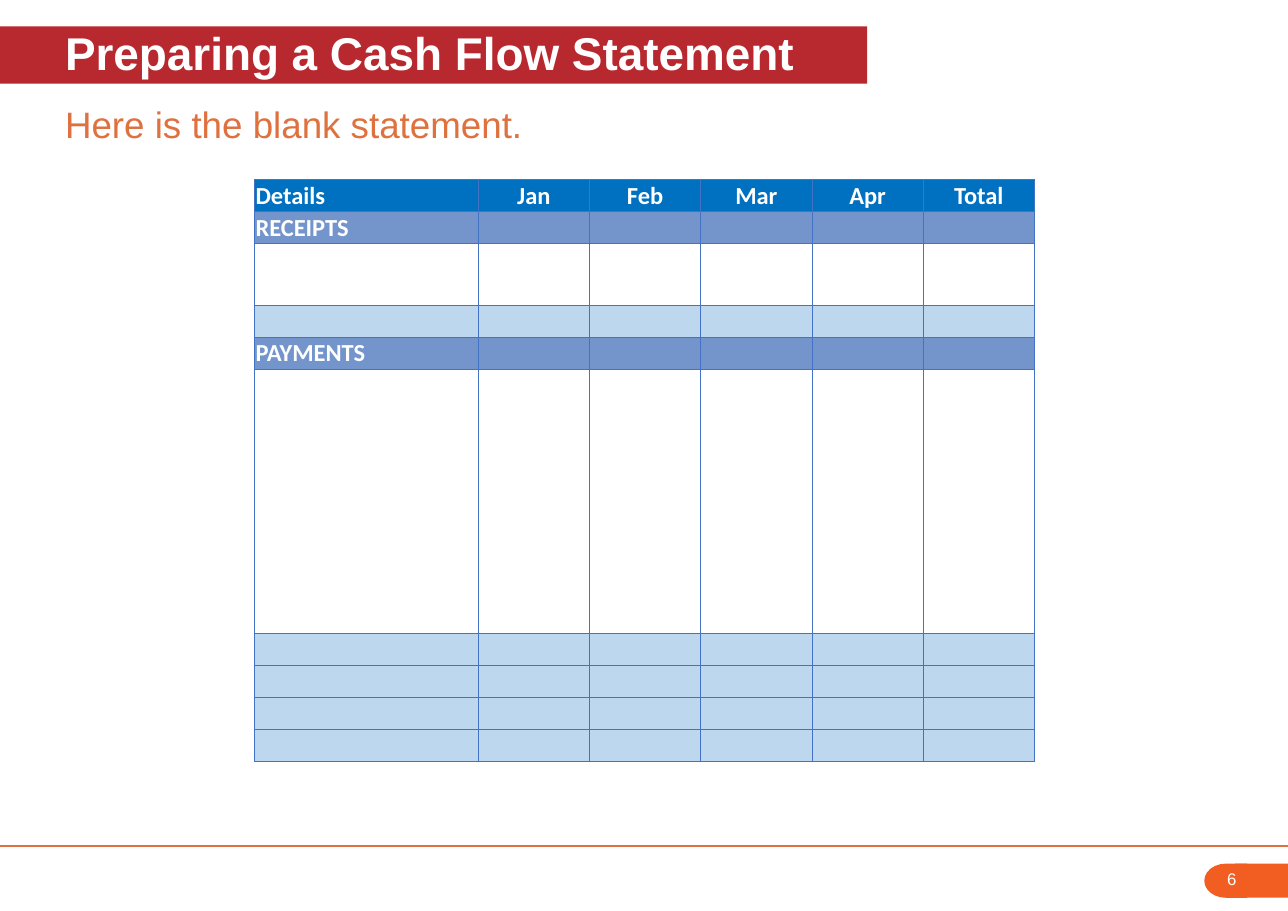
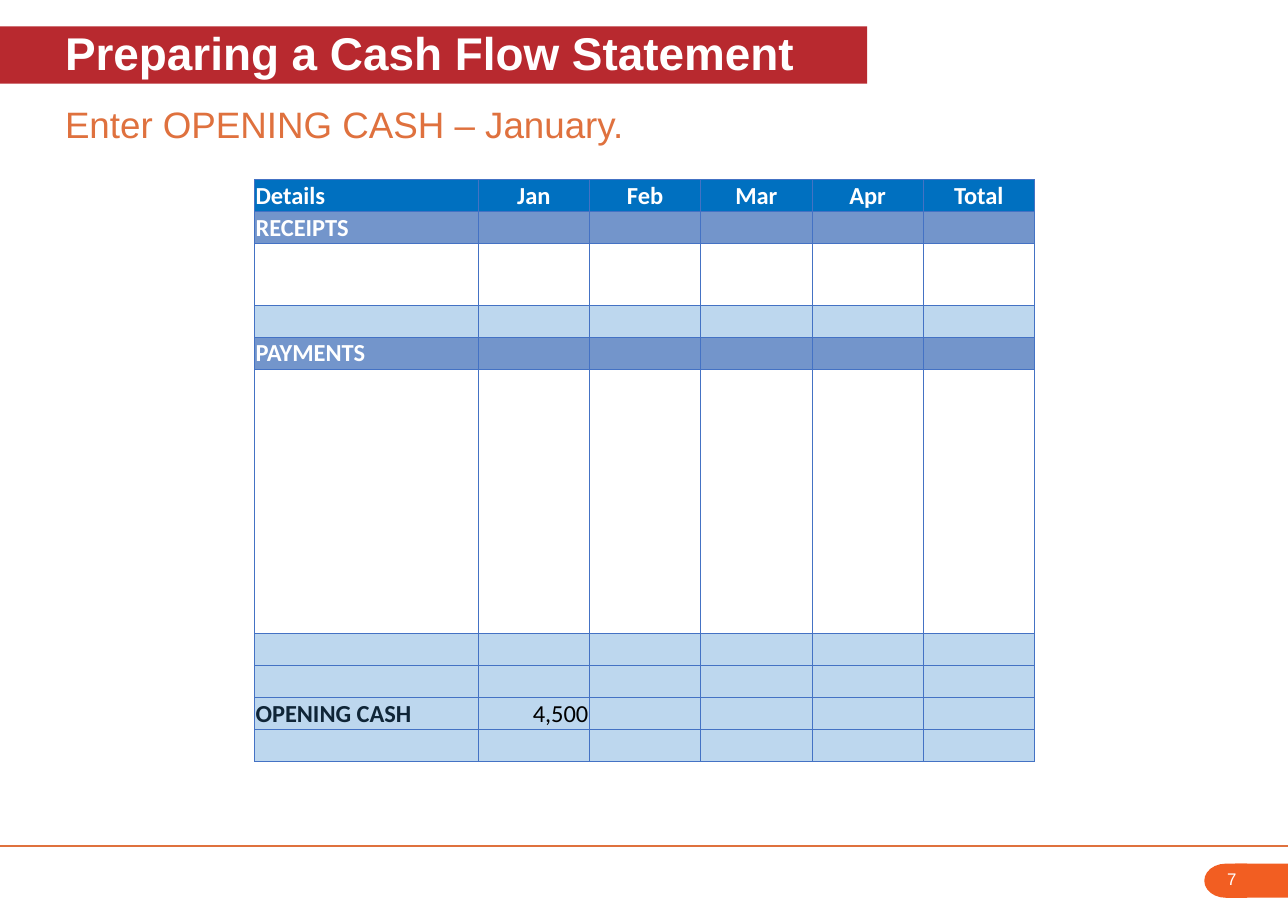
import pptx
import pptx.dml.color
import pptx.enum.shapes
import pptx.enum.text
import pptx.oxml
import pptx.oxml.ns
import pptx.util

Inches = pptx.util.Inches
Pt = pptx.util.Pt
RGB = pptx.dml.color.RGBColor.from_string
MIDDLE = pptx.enum.text.MSO_ANCHOR.MIDDLE
ALIGN = pptx.enum.text.PP_ALIGN
SHAPE = pptx.enum.shapes.MSO_SHAPE

COLORS = {
    "white": "FFFFFF", "black": "000000", "navy": "0F2537",
    "title": "B8292F", "accent": "DF713E", "badge": "F25E22",
    "header": "0070C0", "section": "7395CB", "total": "BDD7EE", "grid": "4472C4",
}
SLIDE_WIDTH = 11.69
TITLE = "Preparing a Cash Flow Statement"
SLIDES = [
    (6, "Here is the blank statement.", {}),
    (7, "Enter OPENING CASH – January.", {(16, 0): "OPENING CASH", (16, 1): "4,500"}),
]

HEADINGS = ["Details", "Jan", "Feb", "Mar", "Apr", "Total"]
LABELS = {(0, col): heading for col, heading in enumerate(HEADINGS)}
LABELS |= {(1, 0): "RECEIPTS", (5, 0): "PAYMENTS"}
COLUMN_WIDTHS = [2.03] + [1.01] * 5
# Each band: fill colour, number of rows, row height
BANDS = [
    ("header", 1, 0.29), ("section", 1, 0.29), ("white", 2, 0.28), ("total", 1, 0.29),
    ("section", 1, 0.29), ("white", 8, 0.3), ("total", 4, 0.29),
]
# Each row: fill colour, height, line above, line below; entry rows form one open block
ROWS = [
    (fill, height, fill != "white" or i == 0, fill != "white" or i == count - 1)
    for fill, count, height in BANDS for i in range(count)
]


def write(frame, text, font, size, color, bold=False, align=ALIGN.LEFT):
    """Put one paragraph of evenly formatted text in a frame."""
    frame.text = text
    para = frame.paragraphs[0]
    para.alignment = align
    para.font.name = font
    para.font.size = Pt(size)
    para.font.bold = bold
    para.font.color.rgb = RGB(COLORS[color])


def set_borders(cell, top, bottom):
    """Rule both sides of a cell, and its top and bottom where asked."""
    properties = cell._tc.get_or_add_tcPr()
    for side, shown in (("L", True), ("R", True), ("T", top), ("B", bottom)):
        paint = f'<a:solidFill><a:srgbClr val="{COLORS["grid"]}"/></a:solidFill>'
        properties.append(pptx.oxml.parse_xml(
            f'<a:ln{side} {pptx.oxml.ns.nsdecls("a")} w="{Pt(0.5)}">'
            f'{paint if shown else "<a:noFill/>"}</a:ln{side}>'))


deck = pptx.Presentation()
deck.slide_width = Inches(SLIDE_WIDTH)
deck.slide_height = Inches(8.27)

for number, subtitle, entries in SLIDES:
    page = deck.slides.add_slide(deck.slide_layouts[5])

    # Footer
    rule = page.shapes.add_connector(
        pptx.enum.shapes.MSO_CONNECTOR.STRAIGHT,
        0, Inches(7.68), Inches(SLIDE_WIDTH), Inches(7.68))
    rule.line.color.rgb = RGB(COLORS["accent"])
    rule.line.width = Pt(0.75)
    rule._element.spPr.append(
        pptx.oxml.parse_xml(f'<a:effectLst {pptx.oxml.ns.nsdecls("a")}/>'))
    for kind, left, width, turn in (
        (SHAPE.FLOWCHART_DELAY, 10.93, 0.39, 180),
        (SHAPE.RECTANGLE, 11.21, 0.48, 0),
    ):
        badge = page.shapes.add_shape(
            kind, Inches(left), Inches(7.84), Inches(width), Inches(0.31))
        badge.rotation = turn
        badge.shadow.inherit = False
        badge.fill.solid()
        badge.fill.fore_color.rgb = RGB(COLORS["badge"])
        badge.line.fill.background()
    number_box = page.shapes.add_textbox(
        Inches(11.04), Inches(7.84), Inches(0.56), Inches(0.28))
    number_box.text_frame.word_wrap = True
    write(number_box.text_frame, str(number), "Arial", 11, "white")

    # Title band and subtitle
    title = page.shapes.title
    title.left, title.top = 0, Inches(0.24)
    title.width, title.height = Inches(7.87), Inches(0.52)
    title.fill.solid()
    title.fill.fore_color.rgb = RGB(COLORS["title"])
    subtitle_box = page.shapes.add_textbox(
        0, Inches(0.89), Inches(SLIDE_WIDTH), Inches(0.51))
    for box, text, size, color, bold in (
        (title, TITLE, 30, "white", True),
        (subtitle_box, subtitle, 24, "accent", False),
    ):
        frame = box.text_frame
        frame.word_wrap = True
        frame.auto_size = pptx.enum.text.MSO_AUTO_SIZE.NONE
        frame.vertical_anchor = MIDDLE
        frame.margin_left, frame.margin_right = Inches(0.59), 0
        frame.margin_top, frame.margin_bottom = 0, Inches(0.05)
        write(frame, text, "Arial", size, color, bold)

    # Cash flow table
    table = page.shapes.add_table(
        len(ROWS), len(HEADINGS), Inches(2.31), Inches(1.63),
        Inches(sum(COLUMN_WIDTHS)), Inches(sum(row[1] for row in ROWS))).table
    table.first_row = table.horz_banding = False
    for column, width in zip(table.columns, COLUMN_WIDTHS):
        column.width = Inches(width)
    texts = LABELS | entries
    for r, (fill, height, top, bottom) in enumerate(ROWS):
        table.rows[r].height = Inches(height)
        for c in range(len(HEADINGS)):
            cell = table.cell(r, c)
            set_borders(cell, top, bottom)
            cell.fill.solid()
            cell.fill.fore_color.rgb = RGB(COLORS[fill])
            cell.vertical_anchor = MIDDLE
            cell.margin_left = cell.margin_right = cell.margin_top = Inches(0.01)
            cell.margin_bottom = 0
            is_amount = c > 0 and r > 0
            if fill in ("header", "section"):
                color = "white"
            else:
                color = "black" if is_amount else "navy"
            if c == 0:
                align = ALIGN.LEFT
            else:
                align = ALIGN.RIGHT if is_amount else ALIGN.CENTER
            write(cell.text_frame, texts.get((r, c), ""), "Calibri", 16, color,
                  not is_amount, align)

deck.save("out.pptx")
